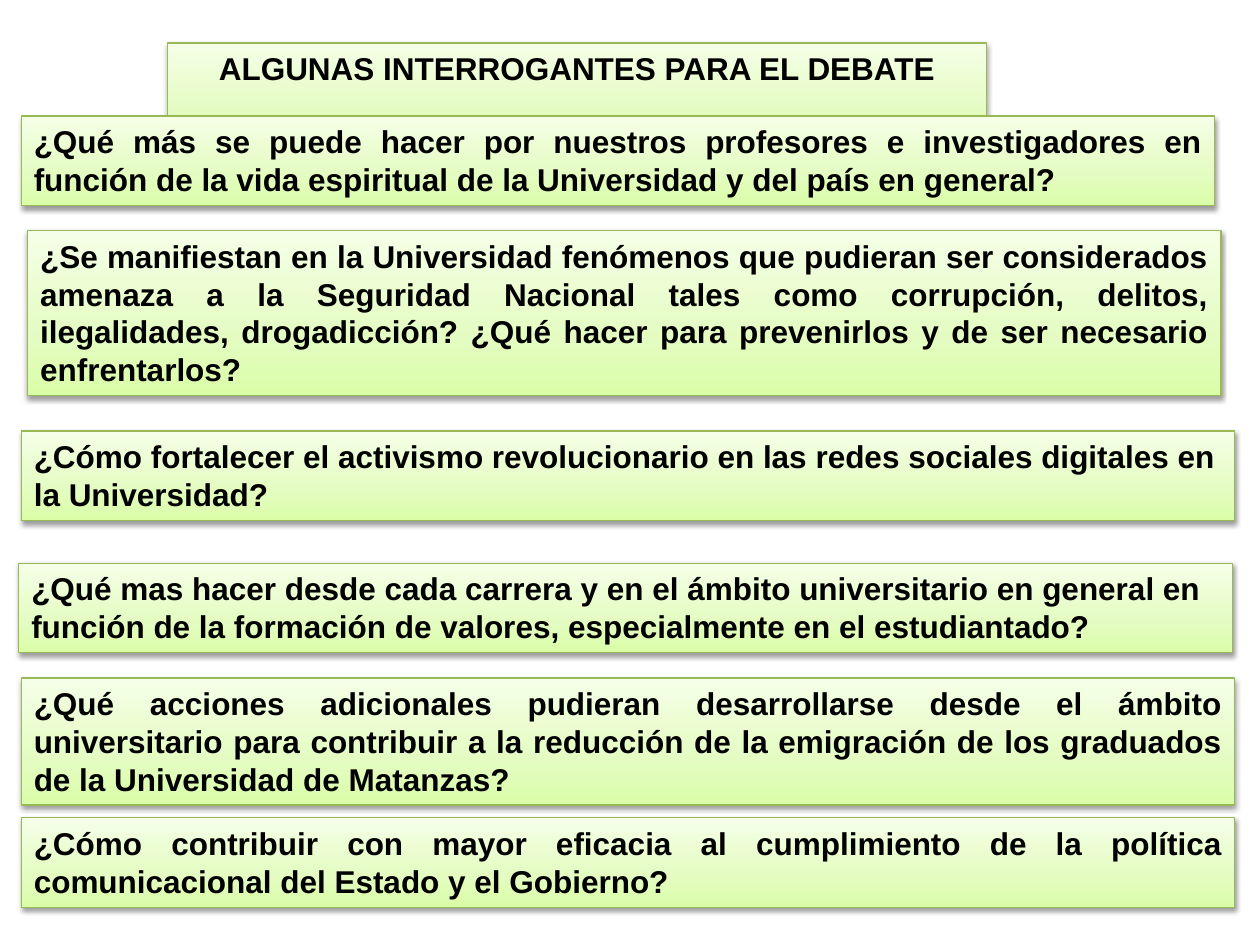
from copy import deepcopy

from lxml.etree import SubElement
from pptx import Presentation
from pptx.dml.color import RGBColor
from pptx.enum.text import MSO_ANCHOR, MSO_AUTO_SIZE, PP_ALIGN
from pptx.oxml.ns import qn
from pptx.util import Inches, Pt

# Content: heading, then questions as (left, top, width, height, alignment, text)
HEADING = (1.33, 0.34, 6.5, 0.4, PP_ALIGN.CENTER, "ALGUNAS INTERROGANTES PARA EL DEBATE")
QUESTIONS = [
    (0.17, 0.92, 9.47, 0.71, PP_ALIGN.JUSTIFY,
     "¿Qué más se puede hacer por nuestros profesores e investigadores en función de la vida "
     "espiritual de la Universidad y del país en general?"),
    (0.22, 1.83, 9.47, 1.31, PP_ALIGN.JUSTIFY,
     "¿Se manifiestan en la Universidad fenómenos que pudieran ser considerados amenaza a la "
     "Seguridad Nacional tales como corrupción, delitos, ilegalidades, drogadicción? ¿Qué hacer "
     "para prevenirlos y de ser necesario enfrentarlos?"),
    (0.17, 3.42, 9.63, 0.71, PP_ALIGN.LEFT,
     "¿Cómo fortalecer el activismo revolucionario en las redes sociales digitales en la "
     "Universidad?"),
    (0.15, 4.47, 9.63, 0.71, PP_ALIGN.LEFT,
     "¿Qué mas hacer desde cada carrera y en el ámbito universitario en general en función de "
     "la formación de valores, especialmente en el estudiantado?"),
    (0.17, 5.38, 9.63, 1.01, PP_ALIGN.JUSTIFY,
     "¿Qué acciones adicionales pudieran desarrollarse desde el ámbito universitario para "
     "contribuir a la reducción de la emigración de los graduados de la Universidad de Matanzas?"),
    (0.17, 6.49, 9.63, 0.71, PP_ALIGN.JUSTIFY,
     "¿Cómo contribuir con mayor eficacia al cumplimiento de la política comunicacional del "
     "Estado y el Gobierno?"),
]

# Format values
BLACK = RGBColor(0x00, 0x00, 0x00)
BORDER_GREEN = RGBColor(0x98, 0xB9, 0x55)
GRADIENT = [
    (0, RGBColor(0xDA, 0xFD, 0xA7)),
    (0.35, RGBColor(0xE4, 0xFC, 0xC2)),
    (1, RGBColor(0xF5, 0xFF, 0xE7)),
]
FONT = {"name": "Arial", "size": Pt(18), "bold": True}
FRAME = {
    "word_wrap": True,
    "auto_size": MSO_AUTO_SIZE.SHAPE_TO_FIT_TEXT,
    "vertical_anchor": MSO_ANCHOR.TOP,
    "margin_left": Inches(0.1), "margin_right": Inches(0.1),
    "margin_top": Inches(0.05), "margin_bottom": Inches(0.05),
}
SHADOW = {"blurRad": Pt(3.1), "dist": Pt(1.6), "dir": 90 * 60000, "rotWithShape": 0}


def set_attributes(target, values):
    for name, value in values.items():
        setattr(target, name, value)


def paint_panel(shape):
    """Give the shape the green gradient, thin border and soft shadow."""
    shape.fill.gradient()
    shape.fill.gradient_angle = 90
    stop_list = shape.element.spPr.find(".//" + qn("a:gsLst"))
    stop_list.append(deepcopy(stop_list[0]))
    for stop, (position, color) in zip(shape.fill.gradient_stops, GRADIENT):
        stop.position = position
        stop.color.rgb = color
    shape.line.color.rgb = BORDER_GREEN
    shape.line.width = Pt(0.75)

    shape.shadow.inherit = False
    effects = shape.element.spPr.find(qn("a:effectLst"))
    shadow = SubElement(effects, qn("a:outerShdw"),
                        {name: str(value) for name, value in SHADOW.items()})
    shadow_color = SubElement(shadow, qn("a:srgbClr"), val="000000")
    SubElement(shadow_color, qn("a:alpha"), val="38000")


def fill_panel(shape, panel):
    """Place the shape and write its formatted text."""
    *box, alignment, text = panel
    set_attributes(shape, dict(zip(("left", "top", "width", "height"), map(Inches, box))))
    paint_panel(shape)
    set_attributes(shape.text_frame, FRAME)
    paragraph = shape.text_frame.paragraphs[0]
    paragraph.alignment = alignment
    run = paragraph.add_run()
    run.text = text
    set_attributes(run.font, FONT)
    run.font.color.rgb = BLACK


# Slide
presentation = Presentation()
presentation.slide_width, presentation.slide_height = Inches(10), Inches(7.5)
slide = presentation.slides.add_slide(presentation.slide_layouts[5])

# Heading and question panels
fill_panel(slide.shapes.title, HEADING)
for question in QUESTIONS:
    fill_panel(slide.shapes.add_textbox(0, 0, 0, 0), question)

presentation.save("out.pptx")
